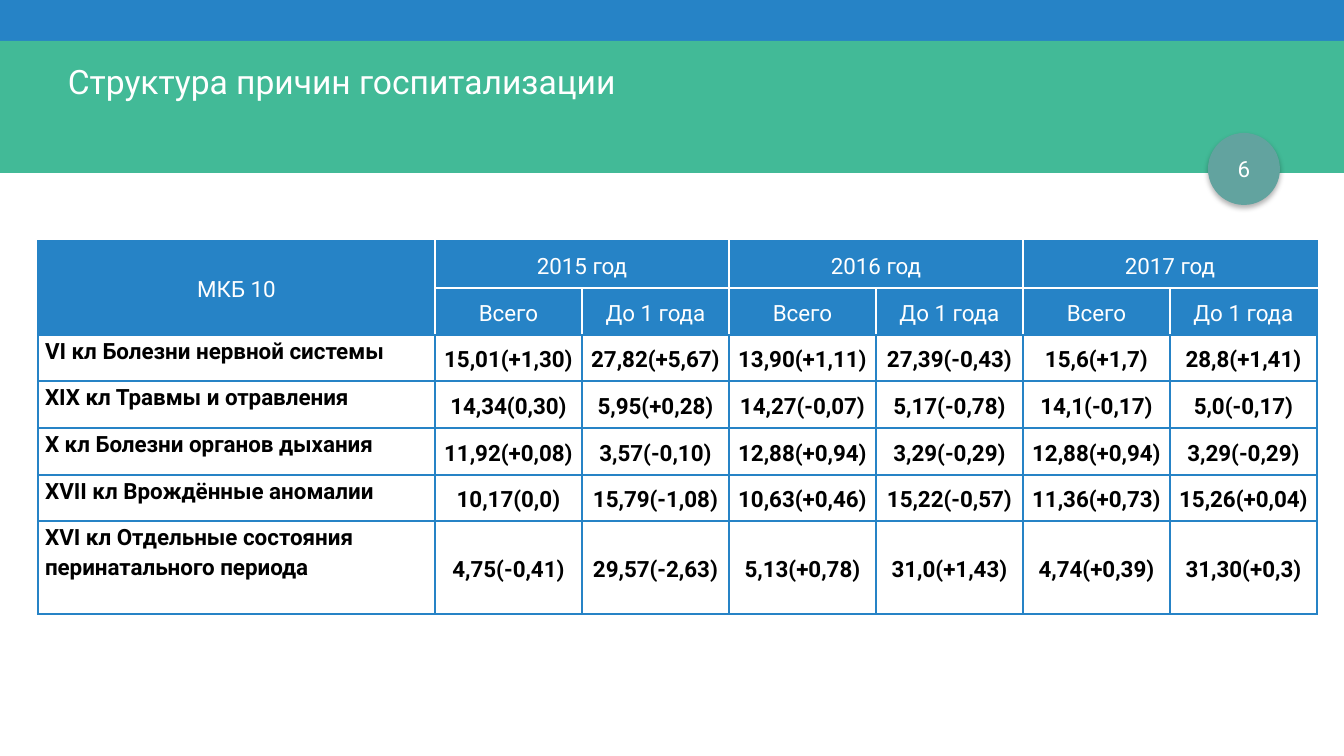
from lxml import etree
from pptx import Presentation
from pptx import util as u
from pptx.dml.color import RGBColor
from pptx.enum import shapes, text
from pptx.oxml import ns

BLUE = RGBColor(0x26, 0x83, 0xC6)
GREEN = RGBColor(0x42, 0xBA, 0x97)
TEAL = RGBColor(0x62, 0xA3, 0x9F)
WHITE = RGBColor(0xFF, 0xFF, 0xFF)
BLACK = RGBColor(0, 0, 0)

YEARS = ["2015 год", "2016 год", "2017 год"]
CAUSES = [
    ["VI кл Болезни нервной системы", "15,01(+1,30)", "27,82(+5,67)",
     "13,90(+1,11)", "27,39(-0,43)", "15,6(+1,7)", "28,8(+1,41)"],
    ["XIX кл Травмы и отравления", "14,34(0,30)", "5,95(+0,28)",
     "14,27(-0,07)", "5,17(-0,78)", "14,1(-0,17)", "5,0(-0,17)"],
    ["X кл Болезни органов дыхания", "11,92(+0,08)", "3,57(-0,10)",
     "12,88(+0,94)", "3,29(-0,29)", "12,88(+0,94)", "3,29(-0,29)"],
    ["XVII кл Врождённые аномалии", "10,17(0,0)", "15,79(-1,08)",
     "10,63(+0,46)", "15,22(-0,57)", "11,36(+0,73)", "15,26(+0,04)"],
    ["XVI кл Отдельные состояния перинатального периода", "4,75(-0,41)",
     "29,57(-2,63)", "5,13(+0,78)", "31,0(+1,43)", "4,74(+0,39)", "31,30(+0,3)"],
]
COLS = [397] + [147] * 6
ROWS = [47, 47, 46, 47, 47, 46, 93]
HEADER_ROWS = 2


def px(n):
    return u.Emu(round(n * 914400 / 100.8))


def add_xml(parent, tag, **attrs):
    el = etree.SubElement(parent, ns.qn(tag))
    for name, value in attrs.items():
        el.set(name, str(value))
    return el


def write(tf, content, size=16, color=WHITE, bold=False, centered=True, spacing=1.0):
    p = tf.paragraphs[0]
    p.alignment = text.PP_ALIGN.CENTER if centered else text.PP_ALIGN.LEFT
    p.line_spacing = spacing
    r = p.add_run()
    r.text = content
    r.font.name = "Roboto"
    r.font.size = u.Pt(size)
    r.font.bold = bold
    r.font.color.rgb = color


class Deck:
    def __init__(self):
        self.prs = Presentation()
        self.prs.slide_width, self.prs.slide_height = px(1344), px(756)
        self.s = self.prs.slides.add_slide(self.prs.slide_layouts[6])

    def shape(self, kind, x, y, w, h, fill):
        sp = self.s.shapes.add_shape(kind, px(x), px(y), px(w), px(h))
        sp.shadow.inherit = False
        sp.fill.solid()
        sp.fill.fore_color.rgb = fill
        sp.line.fill.background()
        return sp

    def drop_shadow(self, sp):
        effects = sp._element.spPr.find(ns.qn("a:effectLst"))
        shadow = add_xml(effects, "a:outerShdw", blurRad=u.Pt(4), dist=u.Pt(2),
                         dir=5400000, algn="ctr", rotWithShape=0)
        color = add_xml(shadow, "a:srgbClr", val=BLACK)
        add_xml(color, "a:alpha", val=30000)

    def label(self, content, x, y, w, h, anchor=text.MSO_ANCHOR.TOP, **fmt):
        tf = self.s.shapes.add_textbox(px(x), px(y), px(w), px(h)).text_frame
        tf.word_wrap = True
        tf.vertical_anchor = anchor
        write(tf, content, **fmt)

    def borders(self, cell, row, col):
        header = row < HEADER_ROWS
        last = col + (cell.span_width if cell.is_merge_origin else 1) - 1
        inner = {
            "L": header and col > 0,
            "R": header and last < len(COLS) - 1,
            "T": row == 1 and col > 0,
            "B": row == 0 and col > 0,
        }
        tcPr = cell._tc.get_or_add_tcPr()
        for side, white in inner.items():
            ln = add_xml(tcPr, f"a:ln{side}", w=u.Pt(1))
            fill = add_xml(ln, "a:solidFill")
            add_xml(fill, "a:srgbClr", val=WHITE if white else BLUE)

    def cell(self, cell, content, row, col):
        header = row < HEADER_ROWS
        cause = not header and col == 0
        self.borders(cell, row, col)
        if header:
            cell.fill.solid()
            cell.fill.fore_color.rgb = BLUE
        else:
            cell.fill.background()
        cell.margin_left = cell.margin_right = px(7)
        cell.margin_top = cell.margin_bottom = 0
        cell.vertical_anchor = text.MSO_ANCHOR.TOP if cause else text.MSO_ANCHOR.MIDDLE
        if not cell.is_spanned:
            write(cell.text_frame, content, color=WHITE if header else BLACK,
                  bold=not header, centered=not cause, spacing=1.15)

    def table(self, x, y, data):
        frame = self.s.shapes.add_table(len(ROWS), len(COLS), px(x), px(y),
                                        px(sum(COLS)), px(sum(ROWS)))
        tbl = frame.table
        tbl.first_row = tbl.horz_banding = False
        for column, width in zip(tbl.columns, COLS):
            column.width = px(width)
        for line, height in zip(tbl.rows, ROWS):
            line.height = px(height)
        tbl.cell(0, 0).merge(tbl.cell(1, 0))
        for col in range(1, len(COLS), 2):
            tbl.cell(0, col).merge(tbl.cell(0, col + 1))
        for row, values in enumerate(data):
            for col, value in enumerate(values):
                self.cell(tbl.cell(row, col), value, row, col)


def main():
    deck = Deck()
    rect = shapes.MSO_SHAPE.RECTANGLE
    deck.shape(rect, 0, 0, 1344, 41, BLUE)
    deck.shape(rect, 0, 41, 1344, 132, GREEN)
    badge = deck.shape(shapes.MSO_SHAPE.OVAL, 1208, 133, 72, 72, TEAL)
    deck.drop_shadow(badge)
    deck.label("Структура причин госпитализации", 58, 61, 1238, 47,
               size=24, centered=False, spacing=0.9)
    deck.label("6", 1204, 149, 80, 40, anchor=text.MSO_ANCHOR.MIDDLE)

    years = ["МКБ 10"]
    for year in YEARS:
        years += [year, ""]
    groups = [""] + ["Всего", "До 1 года"] * len(YEARS)
    deck.table(38, 241, [years, groups] + CAUSES)
    deck.prs.save("out.pptx")


if __name__ == "__main__":
    main()
